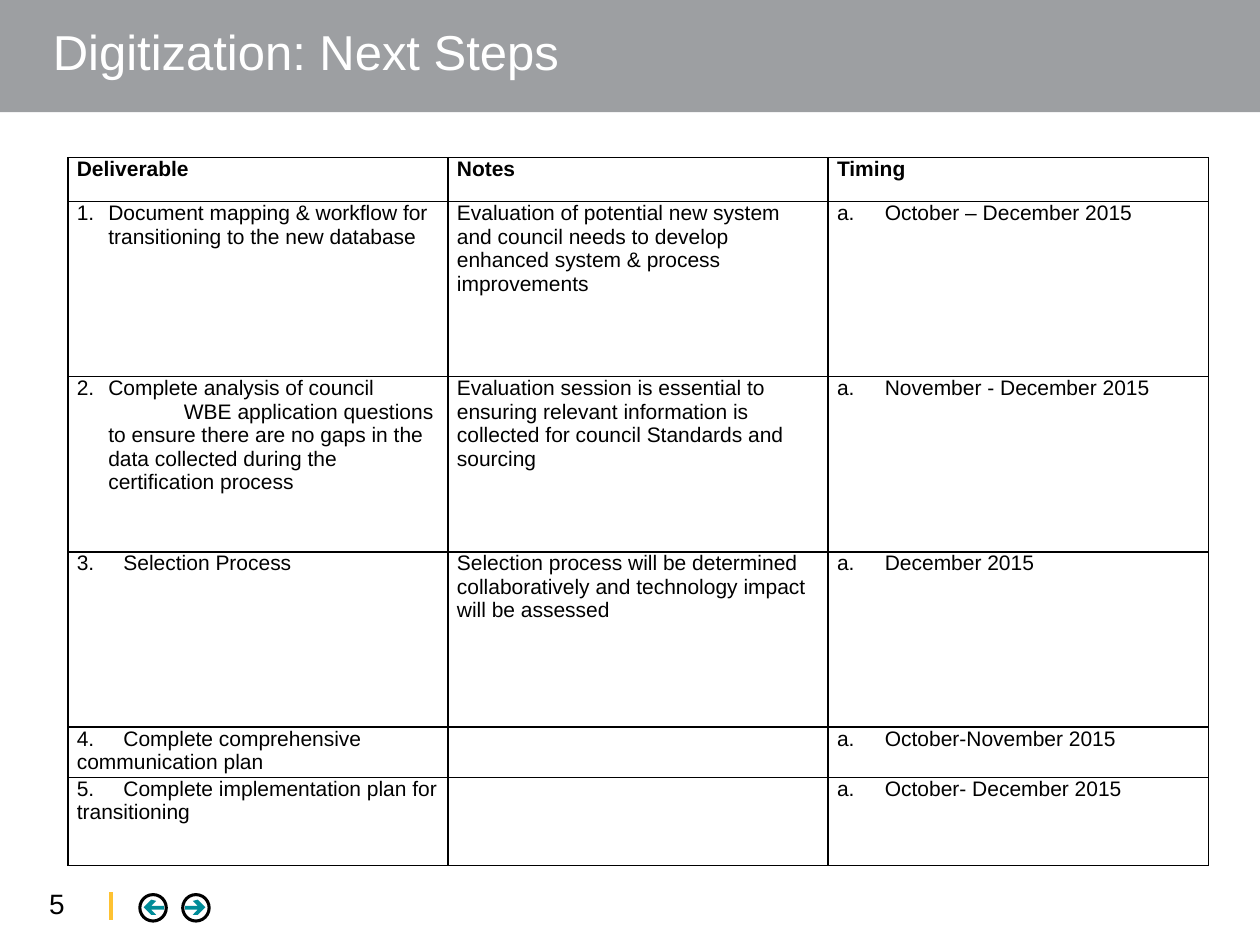
from lxml import etree
from pptx import Presentation
from pptx.dml.color import RGBColor
from pptx.enum.shapes import MSO_CONNECTOR, MSO_SHAPE
from pptx.enum.text import MSO_ANCHOR
from pptx.oxml.ns import qn
from pptx.util import Inches, Pt

RECT, OVAL = MSO_SHAPE.RECTANGLE, MSO_SHAPE.OVAL
STRAIGHT = MSO_CONNECTOR.STRAIGHT
MIDDLE, TOP = MSO_ANCHOR.MIDDLE, MSO_ANCHOR.TOP
COLORS = {"band": "9D9FA2", "white": "FFFFFF", "black": "000000",
          "rule": "FEC232", "arrow": "008C99"}
FONT = "Arial"
HEADERS = ["Deliverable", "Notes", "Timing"]
NUMBER, LETTER = "arabicPeriod", "alphaLcPeriod"
ROW_HEIGHTS = [0.35, 1.39, 1.39, 1.39, 0.35, 0.7]
STEPS = [
    (["Document mapping & workflow for transitioning to the new database"],
     "Evaluation of potential new system and council needs to develop "
     "enhanced system & process improvements",
     "October – December 2015"),
    (["Complete analysis of council",
      "WBE application questions to ensure there are no gaps in the data "
      "collected during the certification process"],
     "Evaluation session is essential to ensuring relevant information is "
     "collected for council Standards and sourcing",
     "November - December 2015"),
    (["3.\tSelection Process"],
     "Selection process will be determined collaboratively and technology "
     "impact will be assessed",
     "December 2015"),
    (["4.\tComplete comprehensive communication plan"], "",
     "October-November 2015"),
    (["5.\tComplete implementation plan for transitioning"], "",
     "October- December 2015"),
]
AUTO_NUMBERED = 2
ARROW = [(0.02, 0.09), (0.12, 0.09), (0.08, 0.05), (0.12, 0.04), (0.18, 0.1),
         (0.12, 0.16), (0.08, 0.16), (0.12, 0.12), (0.02, 0.12)]
BUTTON = 0.21


def rgb(name):
    return RGBColor.from_string(COLORS[name])


def add_run(p, text, size, color, bold=False):
    r = p.add_run()
    r.text = text
    r.font.name = FONT
    r.font.size = Pt(size)
    r.font.bold = bold
    r.font.color.rgb = rgb(color)


def add_text(s, box, text, size, color, anchor):
    tf = s.shapes.add_textbox(*map(Inches, box)).text_frame
    tf.word_wrap = True
    tf.vertical_anchor = anchor
    tf.margin_left = tf.margin_right = tf.margin_top = tf.margin_bottom = 0
    p = tf.paragraphs[0]
    add_run(p, text, size, color)
    return p


def set_indent(p, left, first):
    pPr = p._p.get_or_add_pPr()
    pPr.set("marL", str(Inches(left)))
    pPr.set("indent", str(Inches(first)))
    return pPr


def add_numbering(p, hang, scheme, start=1):
    pPr = set_indent(p, hang, -hang)
    etree.SubElement(pPr, qn("a:buFont"), typeface="+mj-lt")
    bullet = etree.SubElement(pPr, qn("a:buAutoNum"), type=scheme)
    if start > 1:
        bullet.set("startAt", str(start))


def add_tab(p, pos):
    tabs = etree.SubElement(p._p.get_or_add_pPr(), qn("a:tabLst"))
    etree.SubElement(tabs, qn("a:tab"), pos=str(Inches(pos)), algn="l")


def style_cell(cell):
    cell.margin_left = cell.margin_right = Inches(0.07)
    cell.margin_top = cell.margin_bottom = 0
    tcPr = cell._tc.get_or_add_tcPr()
    for side in ("lnL", "lnR", "lnT", "lnB"):
        ln = etree.SubElement(tcPr, qn("a:" + side), w=str(Pt(1)))
        fill = etree.SubElement(ln, qn("a:solidFill"))
        etree.SubElement(fill, qn("a:srgbClr"), val=COLORS["black"])
    cell.fill.background()


def fill_deliverable(tf, lines, number):
    p = tf.paragraphs[0]
    if number <= AUTO_NUMBERED:
        add_numbering(p, 0.25, NUMBER, number)
    else:
        add_tab(p, 0.37)
    add_run(p, lines[0], 12, "black")
    for line in lines[1:]:
        p = tf.add_paragraph()
        set_indent(p, 0.25, 0.6)
        add_run(p, line, 12, "black")


def add_steps_table(s, x, y, w):
    rows, cols = len(ROW_HEIGHTS), len(HEADERS)
    table = s.shapes.add_table(rows, cols, Inches(x), Inches(y), Inches(w),
                               Inches(sum(ROW_HEIGHTS))).table
    table.first_row = table.horz_banding = False
    for col in table.columns:
        col.width = Inches(w / cols)
    for row, height in zip(table.rows, ROW_HEIGHTS):
        row.height = Inches(height)
    for cell in table.iter_cells():
        style_cell(cell)
    for i, header in enumerate(HEADERS):
        add_run(table.cell(0, i).text_frame.paragraphs[0], header, 12,
                "black", True)
    for number, (lines, notes, timing) in enumerate(STEPS, 1):
        fill_deliverable(table.cell(number, 0).text_frame, lines, number)
        if notes:
            p = table.cell(number, 1).text_frame.paragraphs[0]
            add_run(p, notes, 12, "black")
        p = table.cell(number, 2).text_frame.paragraphs[0]
        add_numbering(p, 0.38, LETTER)
        add_run(p, timing, 12, "black")


def add_header(s, x, y, w, h):
    band = s.shapes.add_shape(RECT, *map(Inches, (x, y, w, h)))
    band.shadow.inherit = False
    band.fill.solid()
    band.fill.fore_color.rgb = rgb("band")
    band.line.fill.background()
    p = add_text(s, (x + 0.42, y, w - 0.84, h - 0.02),
                 "Digitization: Next Steps", 28, "white", MIDDLE)
    p.line_spacing = 0.9


def add_nav_button(s, x, y, back):
    points = [(Inches(x + (BUTTON - dx if back else dx)), Inches(y + dy))
              for dx, dy in ARROW]
    builder = s.shapes.build_freeform(*points[0])
    builder.add_line_segments(points[1:], close=True)
    arrow = builder.convert_to_shape()
    arrow.shadow.inherit = False
    arrow.fill.solid()
    arrow.fill.fore_color.rgb = rgb("arrow")
    arrow.line.fill.background()
    ring = s.shapes.add_shape(OVAL, *map(Inches, (x, y, BUTTON, BUTTON)))
    ring.shadow.inherit = False
    ring.fill.background()
    ring.line.color.rgb = rgb("black")
    ring.line.width = Pt(1.75)


def add_footer(s, x, y):
    add_text(s, (x, y, 0.4, 0.27), "5", 16, "black", TOP)
    rule = s.shapes.add_connector(
        STRAIGHT, *map(Inches, (x + 0.49, y + 0.04, x + 0.49, y + 0.26)))
    rule.line.color.rgb = rgb("rule")
    rule.line.width = Pt(2)
    etree.SubElement(rule._element.spPr, qn("a:effectLst"))
    add_nav_button(s, x + 0.72, y + 0.06, True)
    add_nav_button(s, x + 1.06, y + 0.06, False)


def main():
    prs = Presentation()
    prs.slide_width, prs.slide_height = Inches(10), Inches(7.5)
    s = prs.slides.add_slide(prs.slide_layouts[6])
    add_footer(s, 0.39, 7.04)
    add_header(s, 0, 0, 10, 0.89)
    add_steps_table(s, 0.54, 1.25, 9.05)
    prs.save("out.pptx")


if __name__ == "__main__":
    main()
